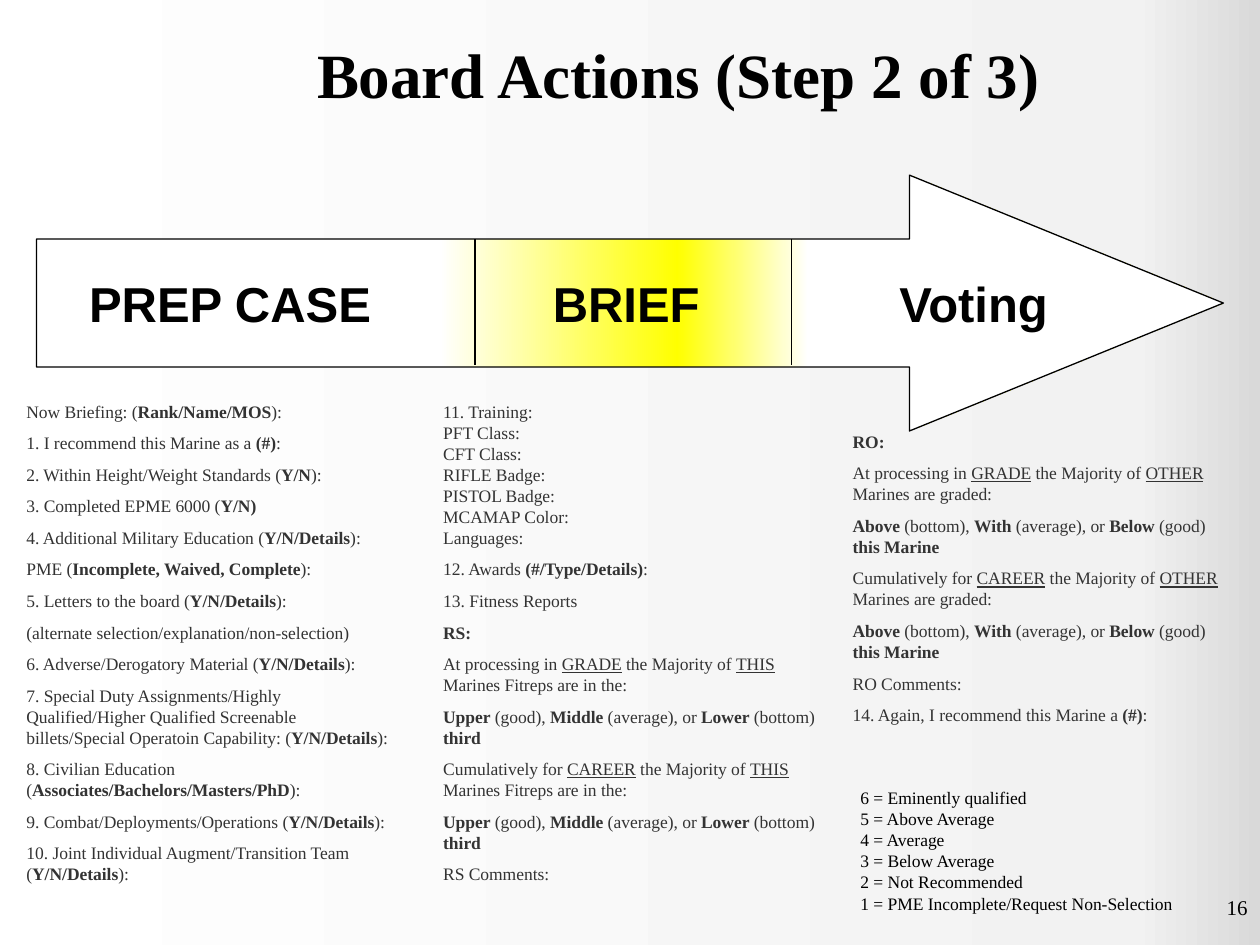
import copy
import pptx
import pptx.dml.color
import pptx.enum.shapes
import pptx.enum.text
import pptx.oxml.ns
import pptx.util
from lxml import etree

Pt = pptx.util.Pt
Align = pptx.enum.text.PP_ALIGN
Anchor = pptx.enum.text.MSO_ANCHOR
qn = pptx.oxml.ns.qn


def color(value):
    return pptx.dml.color.RGBColor.from_string(value)


class Board:
    serif = "Times New Roman"
    sans = "Arial"
    ink = "000000"
    gray = "333333"

    def __init__(self, slide):
        self.slide = slide

    def gradient(self, fill, stops):
        fill.gradient()
        fill.gradient_angle = 0
        first = fill.gradient_stops[0]._gs
        for _ in range(len(stops) - 2):
            first.addnext(copy.deepcopy(first))
        for stop, (position, value) in zip(fill.gradient_stops, stops):
            stop.position = position
            stop.color.rgb = color(value)

    def add_runs(self, paragraph, marked, size, value, font, bold=False):
        for i, part in enumerate(marked.split("*")):
            for j, piece in enumerate(part.split("_")):
                if piece:
                    run = paragraph.add_run()
                    run.text = piece
                    run.font.name = font
                    run.font.size = Pt(size)
                    run.font.bold = bold or i % 2 == 1
                    run.font.underline = j % 2 == 1
                    run.font.color.rgb = color(value)

    def text(self, box, lines, size=10, value=gray, gap=6, tight=1,
             align=Align.LEFT, anchor=Anchor.TOP, bold=False):
        frame = self.slide.shapes.add_textbox(*map(Pt, box)).text_frame
        frame.word_wrap = True
        frame.vertical_anchor = anchor
        for index, line in enumerate(lines):
            paragraph = frame.add_paragraph() if index else frame.paragraphs[0]
            paragraph.alignment = align
            if index >= tight:
                paragraph.space_before = Pt(gap)
            self.add_runs(paragraph, line, size, value, self.serif, bold)

    def arrow(self, box, stops, steps, inset, tabs):
        arrow = self.slide.shapes.add_shape(
            pptx.enum.shapes.MSO_SHAPE.RIGHT_ARROW, *map(Pt, box))
        arrow.shadow.inherit = False
        arrow.adjustments[0] = 0.5
        arrow.adjustments[1] = 1.227
        self.gradient(arrow.fill, stops)
        arrow.line.color.rgb = color(self.ink)
        arrow.line.width = Pt(0.75)
        frame = arrow.text_frame
        frame.word_wrap = True
        frame.margin_left = Pt(inset)
        frame.vertical_anchor = Anchor.MIDDLE
        paragraph = frame.paragraphs[0]
        paragraph.alignment = Align.LEFT
        tab_list = etree.SubElement(paragraph._p.get_or_add_pPr(), qn("a:tabLst"))
        for tab in tabs:
            etree.SubElement(tab_list, qn("a:tab"), pos=str(Pt(tab)), algn="l")
        self.add_runs(paragraph, "\t".join(steps), 28, self.ink, self.sans, True)

    def divider(self, x, top, bottom):
        line = self.slide.shapes.add_connector(
            pptx.enum.shapes.MSO_CONNECTOR.STRAIGHT, Pt(x), Pt(top), Pt(x), Pt(bottom))
        line.line.color.rgb = color(self.ink)
        line.line.width = Pt(0.75)
        etree.SubElement(line._element.spPr, qn("a:effectLst"))


def grading(subject, scale):
    lines = []
    for period in ("At processing in _GRADE_", "Cumulatively for _CAREER_"):
        lines += [f"{period} the Majority of {subject}:", scale]
    return lines


def main():
    deck = pptx.Presentation()
    deck.slide_width, deck.slide_height = Pt(720), Pt(540)
    slide = deck.slides.add_slide(deck.slide_layouts[6])
    board = Board(slide)
    board.gradient(slide.background.fill,
                   [(0, "FFFFFF"), (0.9, "F2F2F2"), (1, "D9D9D9")])

    board.text((84.2, 0, 607, 84.2), ["Board Actions (Step 2 of 3)"], size=36,
               value=board.ink, align=Align.CENTER, anchor=Anchor.MIDDLE, bold=True)

    board.arrow((20.9, 100.1, 678.2, 146.2),
                [(0.34, "FFFFFF"), (0.54, "FFFF00"), (0.65, "FFFFFF")],
                ["PREP CASE", "BRIEF", "Voting"], 30, [265, 463])
    for x in (271.4, 452.2):
        board.divider(x, 136.8, 208.4)

    board.text((8, 225.4, 226, 298), [
        "Now Briefing: (*Rank/Name/MOS*):",
        "1. I recommend this Marine as a *(#)*:",
        "2. Within Height/Weight Standards (*Y/N*):",
        "3. Completed EPME 6000 (*Y/N)*",
        "4. Additional Military Education (*Y/N/Details*):",
        "PME (*Incomplete, Waived, Complete*):",
        "5. Letters to the board (*Y/N/Details*):",
        "(alternate selection/explanation/non-selection)",
        "6. Adverse/Derogatory Material (*Y/N/Details*):",
        "7. Special Duty Assignments/Highly Qualified/Higher Qualified Screenable "
        "billets/Special Operatoin Capability: (*Y/N/Details*):",
        "8. Civilian Education (*Associates/Bachelors/Masters/PhD*):",
        "9. Combat/Deployments/Operations (*Y/N/Details*):",
        "10. Joint Individual Augment/Transition Team (*Y/N/Details*):",
    ])

    board.text((246.2, 225.4, 228.2, 286), [
        "11. Training:",
        "PFT Class:",
        "CFT Class:",
        "RIFLE Badge:",
        "PISTOL Badge:",
        "MCAMAP Color:",
        "Languages:",
        "12. Awards* (#/Type/Details)*:",
        "13. Fitness Reports",
        "*RS:*",
        *grading("_THIS_ Marines Fitreps are in the",
                 "*Upper* (good), *Middle* (average), or *Lower* (bottom) *third*"),
        "RS Comments:",
    ], tight=7)

    board.text((480.2, 242.6, 228.2, 177), [
        "*RO:*",
        *grading("_OTHER_ Marines are graded",
                 "*Above* (bottom), *With* (average), or *Below* (good) *this Marine*"),
        "RO Comments:",
        "14. Again, I recommend this Marine a *(#)*:",
    ])

    board.text((484.6, 446.4, 199.4, 80), [
        "6 = Eminently qualified",
        "5 = Above Average",
        "4 = Average",
        "3 = Below Average",
        "2 = Not Recommended",
        "1 = PME Incomplete/Request Non-Selection",
    ], value=board.ink, gap=0)

    board.text((552.2, 500.4, 167.8, 28.8), ["16"], size=12, value=board.ink,
               align=Align.RIGHT, anchor=Anchor.BOTTOM)

    deck.save("out.pptx")


if __name__ == "__main__":
    main()
